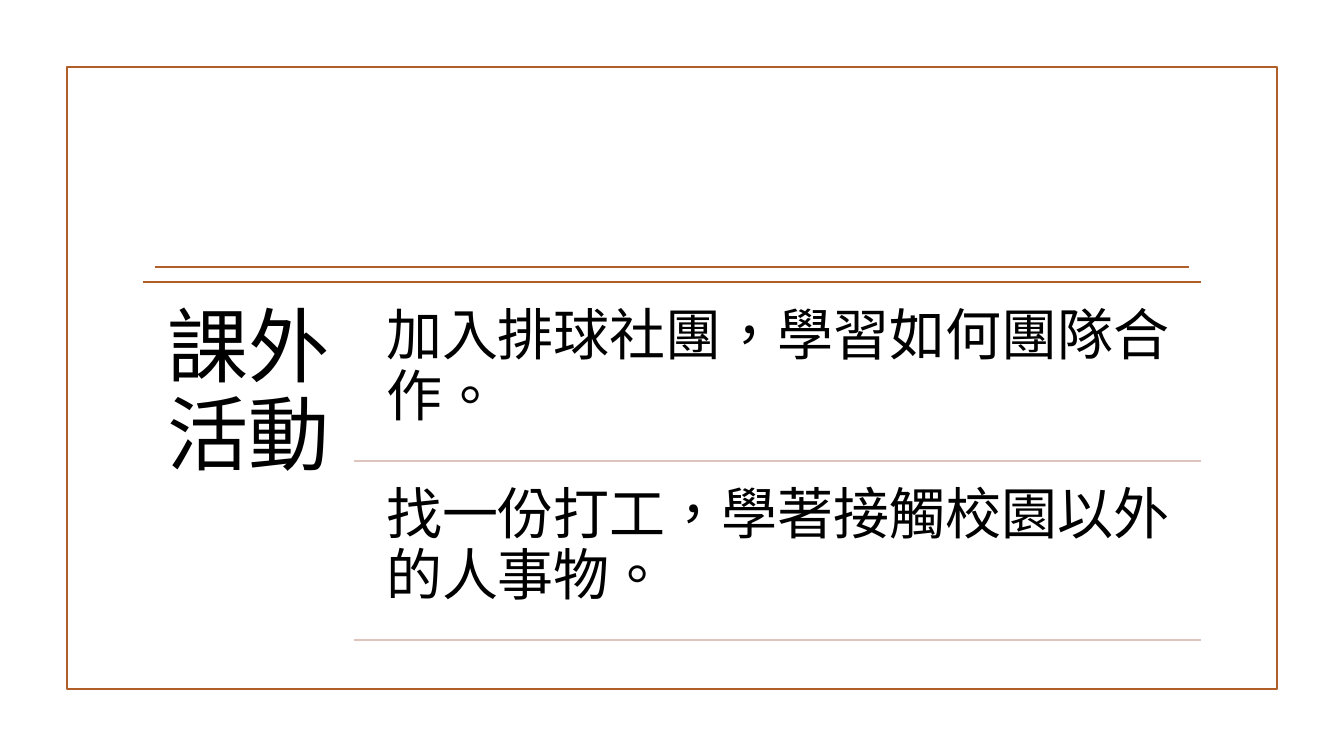
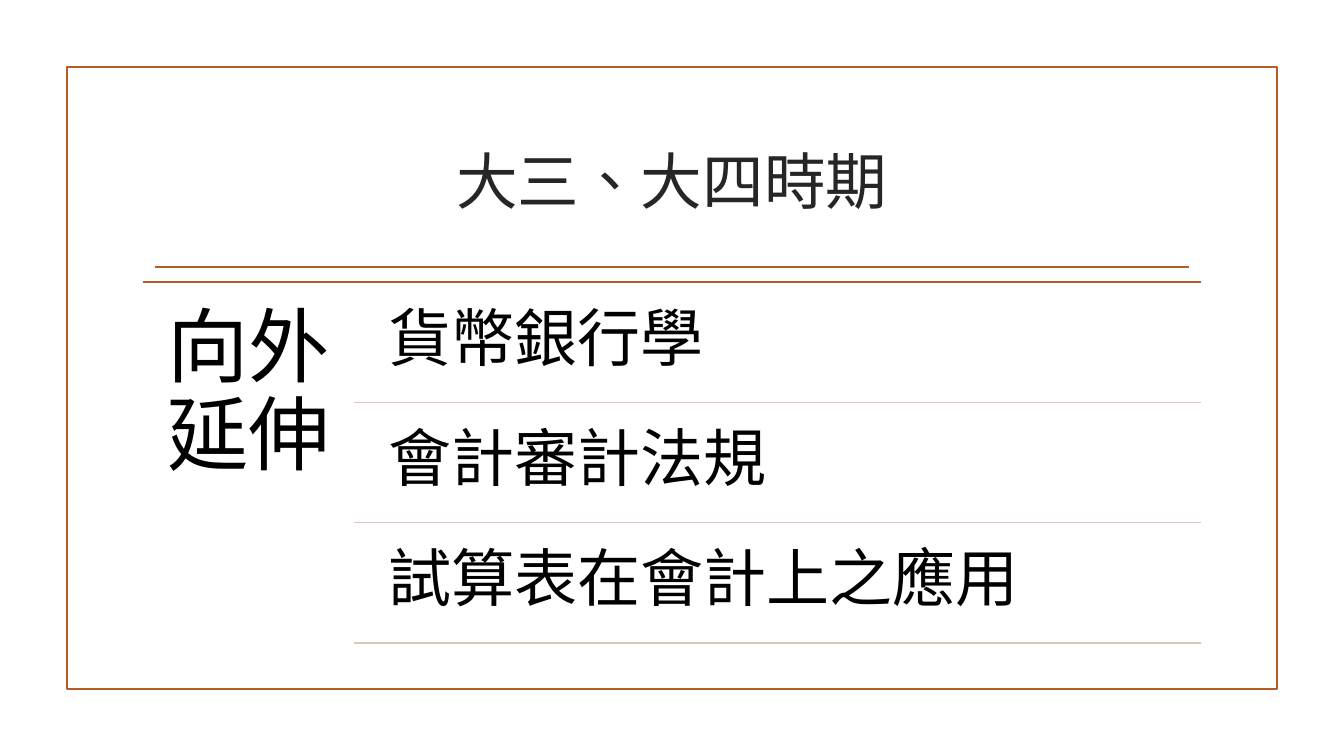
"""Build two outlined slides, each with a side heading and a ruled list."""
from pptx import Presentation
from pptx import util as u
from pptx.dml.color import RGBColor
from pptx.enum import lang, shapes, text
from pptx.oxml.xmlchemy import OxmlElement

ACCENT = RGBColor(0xB1, 0x5E, 0x28)
PALE = RGBColor(0xDD, 0xC5, 0xBE)
BLACK = RGBColor(0x00, 0x00, 0x00)
CHARCOAL = RGBColor(0x26, 0x26, 0x26)
FONT = "Times New Roman"
COLUMNS, ROWS = 40, 45
LEFT, WIDTH = 4.25, 31.5
RIGHT = LEFT + WIDTH
TOP, HEIGHT = 16.8, 21.8
HEADING_WIDTH = WIDTH / 5
TITLE_ONLY, BLANK = 5, 6


class Deck:
    """Hold the style, the grid and the current slide."""

    def __init__(self):
        self.presentation = Presentation()
        self.presentation.slide_width = u.Inches(13.33)
        self.presentation.slide_height = u.Inches(7.5)
        self.slide = None

    def column(self, count):
        return round(self.presentation.slide_width * count / COLUMNS)

    def row(self, count):
        return round(self.presentation.slide_height * count / ROWS)

    def box(self, left, top, width, height):
        return self.column(left), self.row(top), self.column(width), self.row(height)

    def add_slide(self, title):
        layout = self.presentation.slide_layouts[TITLE_ONLY if title else BLANK]
        self.slide = self.presentation.slides.add_slide(layout)
        self.frame()
        self.rule(4.6, 35.4, 15.9, ACCENT)
        if title:
            self.title(title)

    def frame(self):
        shape = self.slide.shapes.add_shape(
            shapes.MSO_SHAPE.RECTANGLE, *self.box(2, 4, 36, 37))
        shape.shadow.inherit = False
        shape.fill.background()
        self.outline(shape, ACCENT)

    def outline(self, shape, color):
        shape.line.color.rgb = color
        shape.line.width = u.Pt(1.25)

    def rule(self, start, end, height, color):
        y = self.row(height)
        line = self.slide.shapes.add_connector(
            shapes.MSO_CONNECTOR.STRAIGHT, self.column(start), y, self.column(end), y)
        self.outline(line, color)
        line._element.spPr.append(OxmlElement("a:effectLst"))

    def add_words(self, paragraph, words, size, color):
        run = paragraph.add_run()
        run.text = words
        run.font.name = FONT
        run.font.size = u.Pt(size)
        run.font.color.rgb = color
        run.font.language_id = lang.MSO_LANGUAGE_ID.TRADITIONAL_CHINESE

    def title(self, words):
        shape = self.slide.shapes.title
        shape.left, shape.top, shape.width, shape.height = self.box(LEFT, 6.4, WIDTH, 8.6)
        frame = shape.text_frame
        frame.auto_size = text.MSO_AUTO_SIZE.NONE
        frame.vertical_anchor = text.MSO_ANCHOR.MIDDLE
        paragraph = frame.paragraphs[0]
        paragraph.alignment = text.PP_ALIGN.CENTER
        self.add_words(paragraph, words, 44, CHARCOAL)

    def label(self, words, size, left, top, width, height):
        shape = self.slide.shapes.add_textbox(*self.box(left, top, width, height))
        frame = shape.text_frame
        frame.word_wrap = True
        frame.vertical_anchor = text.MSO_ANCHOR.TOP
        inset = u.Pt(size * 0.3)
        frame.margin_left = frame.margin_right = inset
        frame.margin_top = frame.margin_bottom = inset
        paragraph = frame.paragraphs[0]
        paragraph.line_spacing = 0.9
        self.add_words(paragraph, words, size, BLACK)

    def ruled_list(self, heading, items, size):
        self.rule(LEFT, RIGHT, TOP, ACCENT)
        self.label(heading, 58, LEFT, TOP, HEADING_WIDTH, HEIGHT)
        start = LEFT + HEADING_WIDTH
        left = start + HEADING_WIDTH * 0.07
        gap_share = 0.05
        height = HEIGHT / (len(items) + gap_share * (len(items) + 1))
        gap = height * gap_share
        for index, item in enumerate(items):
            top = TOP + gap + index * (height + gap)
            self.label(item, size, left, top, RIGHT - left, height)
            self.rule(start, RIGHT, top + height, PALE)


SLIDES = [
    (None, "課外活動", 40,
     ["加入排球社團，學習如何團隊合作。", "找一份打工，學著接觸校園以外的人事物。"]),
    ("大三、大四時期", "向外延伸", 45,
     ["貨幣銀行學", "會計審計法規", "試算表在會計上之應用"]),
]


def main():
    deck = Deck()
    for title, heading, size, items in SLIDES:
        deck.add_slide(title)
        deck.ruled_list(heading, items, size)
    deck.presentation.save("out.pptx")


if __name__ == "__main__":
    main()
